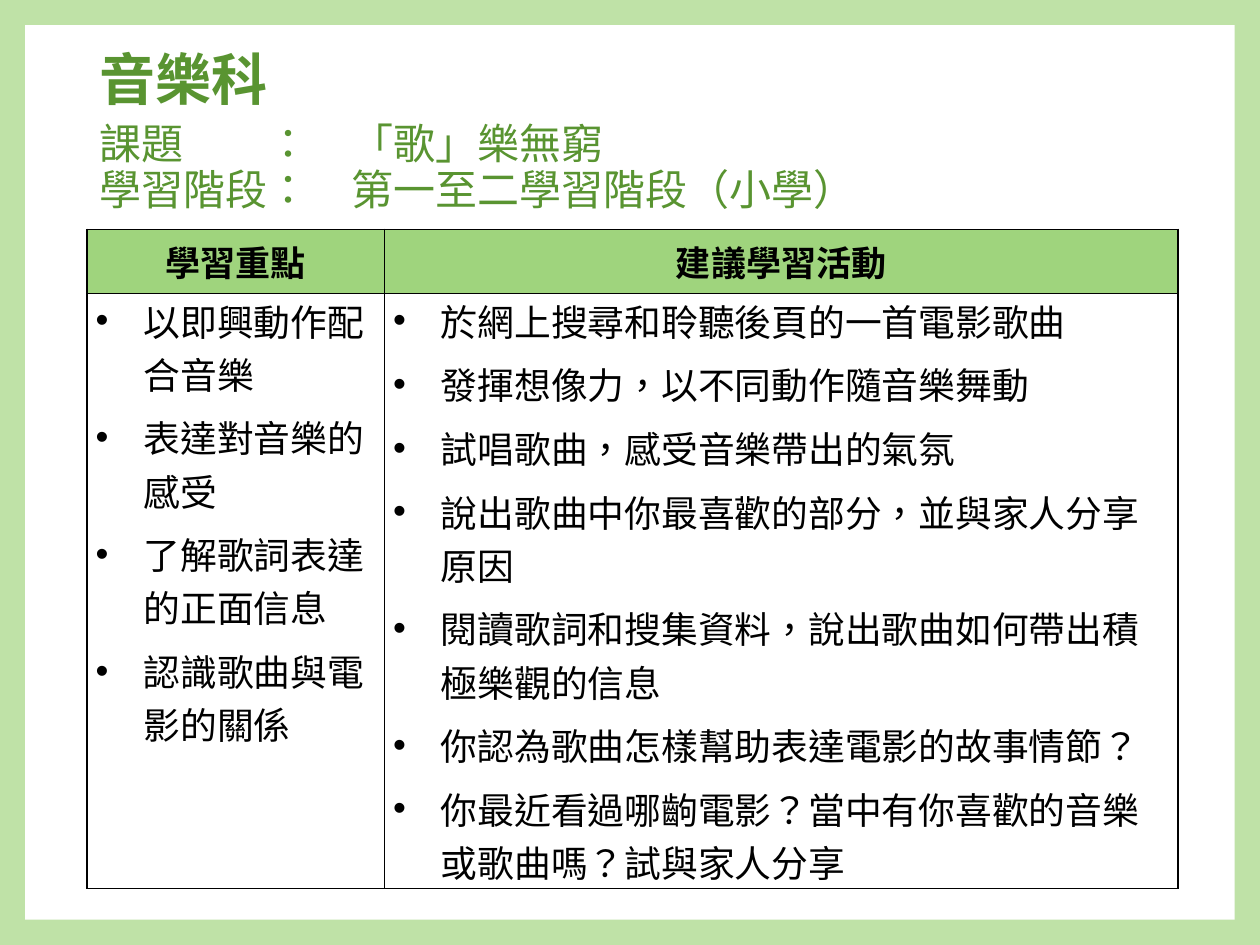
from lxml.etree import SubElement
from pptx import Presentation
from pptx.dml.color import RGBColor
from pptx.enum.lang import MSO_LANGUAGE_ID
from pptx.enum.shapes import MSO_SHAPE
from pptx.enum.text import MSO_ANCHOR, PP_ALIGN
from pptx.oxml import parse_xml
from pptx.oxml.ns import nsdecls, qn
from pptx.util import Inches, Pt

CJK_FONT = "Noto Sans CJK SC"
GREEN = "599431"
COLUMN_WIDTHS = (2.36, 6.3)
ROW_HEIGHTS = (0.51, 4.72)
HEADINGS = ["學習重點", "建議學習活動"]
LEARNING_POINTS = [
    "以即興動作配合音樂",
    "表達對音樂的感受",
    "了解歌詞表達的正面信息",
    "認識歌曲與電影的關係",
]
ACTIVITIES = [
    "於網上搜尋和聆聽後頁的一首電影歌曲",
    "發揮想像力，以不同動作隨音樂舞動",
    "試唱歌曲，感受音樂帶出的氣氛",
    "說出歌曲中你最喜歡的部分，並與家人分享原因",
    "閱讀歌詞和搜集資料，說出歌曲如何帶出積極樂觀的信息",
    "你認為歌曲怎樣幫助表達電影的故事情節？",
    "你最近看過哪齣電影？當中有你喜歡的音樂或歌曲嗎？試與家人分享",
]


def color(hex_string):
    return RGBColor.from_string(hex_string)


def write(frame, lines, size, font=CJK_FONT, hex_color="000000", bold=False,
          align=PP_ALIGN.LEFT, spacing=None, after=0, bullet=False):
    frame.word_wrap = True
    for index, line in enumerate(lines):
        paragraph = frame.paragraphs[0] if index == 0 else frame.add_paragraph()
        paragraph.alignment = align
        paragraph.line_spacing = spacing
        paragraph.space_after = Pt(after)
        if bullet:
            add_bullet(paragraph)
        paragraph.text = line
        for run in paragraph.runs:
            run.font.name = font
            run.font.size = Pt(size)
            run.font.bold = bold
            run.font.color.rgb = color(hex_color)
            run.font.language_id = MSO_LANGUAGE_ID.CHINESE_HONG_KONG_SAR
            SubElement(run.font._element, qn("a:ea"), typeface=CJK_FONT)


def add_bullet(paragraph):
    properties = paragraph._p.get_or_add_pPr()
    properties.set("marL", str(Inches(0.38)))
    properties.set("indent", str(-Inches(0.38)))
    SubElement(properties, qn("a:buFont"), typeface="Arial")
    SubElement(properties, qn("a:buChar"), char="•")


def add_panel(slide):
    panel = slide.shapes.add_shape(
        MSO_SHAPE.RECTANGLE, Inches(0.2), Inches(0.2), Inches(9.6), Inches(7.1))
    panel.shadow.inherit = False
    panel.fill.solid()
    panel.fill.fore_color.rgb = color("FFFFFF")
    panel.line.fill.background()


def add_heading(slide, top, height, lines, **text_format):
    heading = slide.shapes.add_textbox(
        Inches(0.69), Inches(top), Inches(8.62), Inches(height))
    heading.text_frame.vertical_anchor = MSO_ANCHOR.MIDDLE
    write(heading.text_frame, lines, hex_color=GREEN, spacing=0.9, **text_format)


def add_borders(cell):
    properties = cell._tc.get_or_add_tcPr()
    for index, side in enumerate("LRTB"):
        properties.insert(index, parse_xml(
            f'<a:ln{side} {nsdecls("a")} w="{Pt(1)}"><a:solidFill>'
            f'<a:srgbClr val="000000"/></a:solidFill></a:ln{side}>'))


def fill_cell(cell, lines, fill=None, anchor=MSO_ANCHOR.TOP, **text_format):
    cell.margin_left = cell.margin_right = Inches(0.07)
    cell.margin_top = cell.margin_bottom = 0
    cell.vertical_anchor = anchor
    if fill:
        cell.fill.solid()
        cell.fill.fore_color.rgb = color(fill)
    else:
        cell.fill.background()
    add_borders(cell)
    write(cell.text_frame, lines, font="Arial", **text_format)


def add_plan(slide):
    plan = slide.shapes.add_table(
        2, 2, Inches(0.69), Inches(1.82),
        Inches(sum(COLUMN_WIDTHS)), Inches(sum(ROW_HEIGHTS))).table
    for column, width in zip(plan.columns, COLUMN_WIDTHS):
        column.width = Inches(width)
    for row, height in zip(plan.rows, ROW_HEIGHTS):
        row.height = Inches(height)
    for column, items in enumerate((LEARNING_POINTS, ACTIVITIES)):
        fill_cell(plan.cell(0, column), [HEADINGS[column]], fill="9FD47D",
                  anchor=MSO_ANCHOR.MIDDLE, size=20, bold=True,
                  align=PP_ALIGN.CENTER)
        fill_cell(plan.cell(1, column), items, size=21, after=6, bullet=True)


def main():
    presentation = Presentation()
    presentation.slide_width = Inches(10)
    presentation.slide_height = Inches(7.5)
    slide = presentation.slides.add_slide(presentation.slide_layouts[6])
    slide.background.fill.solid()
    slide.background.fill.fore_color.rgb = color("BFE2A7")
    add_panel(slide)
    add_heading(slide, 0.86, 0.96,
                ["課題　　：　「歌」樂無窮", "學習階段：　第一至二學習階段（小學）"],
                size=24)
    add_plan(slide)
    add_heading(slide, 0.35, 0.61, ["音樂科"], size=32, bold=True)
    presentation.save("out.pptx")


if __name__ == "__main__":
    main()
